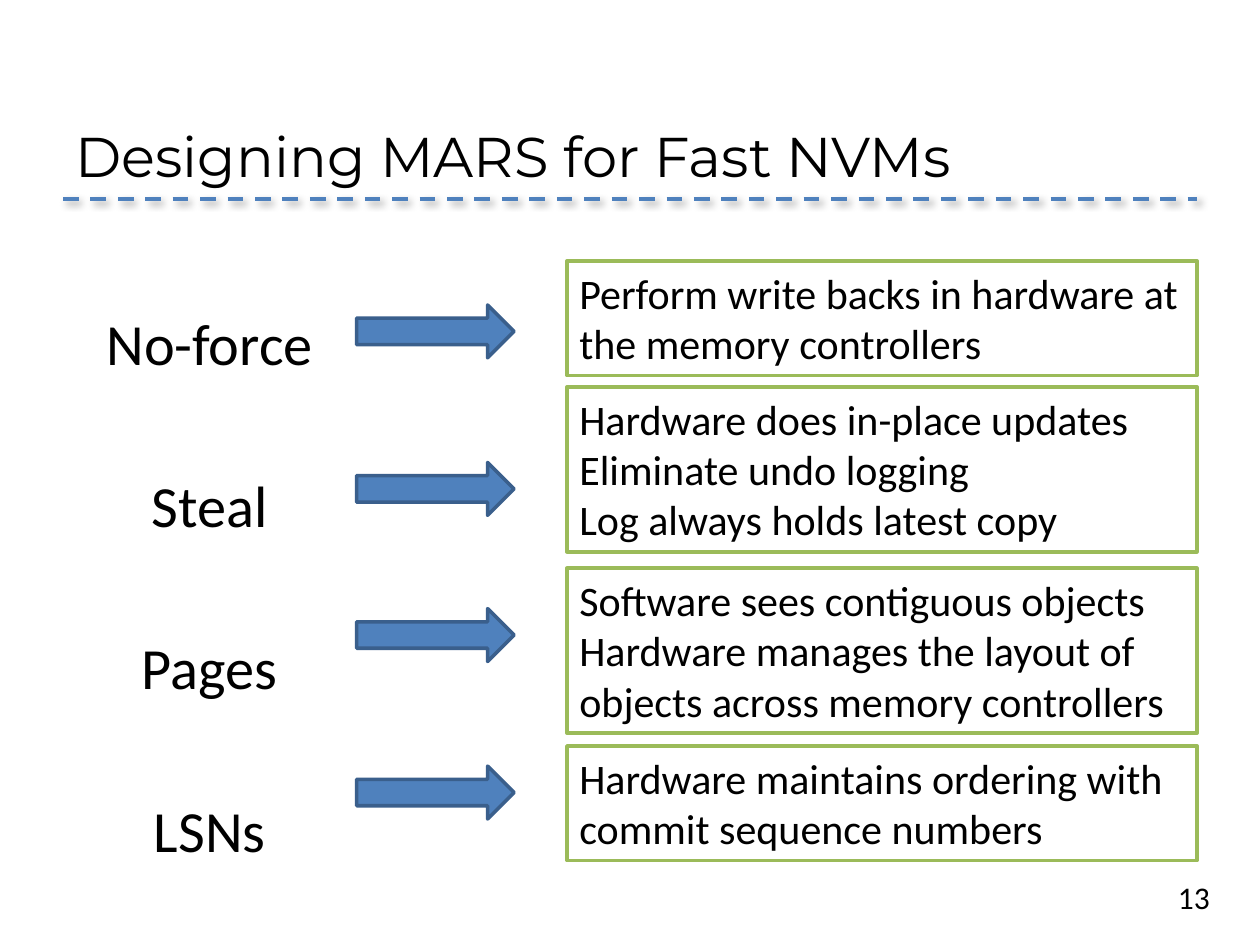
from lxml import etree
from pptx import Presentation
from pptx.dml.color import RGBColor
from pptx.enum import dml, shapes, text
from pptx.oxml import ns
from pptx.util import Inches, Pt

TITLE = "Designing MARS for Fast NVMs"
NUMBER = "13"
TOPICS = [
    ("No-force", 2.42, 2.07, 0.91,
     ["Perform write backs in hardware at the memory controllers"]),
    ("Steal", 3.67, 3.07, 1.31,
     ["Hardware does in-place updates", "Eliminate undo logging",
      "Log always holds latest copy"]),
    ("Pages", 4.83, 4.51, 1.31,
     ["Software sees contiguous objects",
      "Hardware manages the layout of objects across memory controllers"]),
    ("LSNs", 6.08, 5.92, 0.91,
     ["Hardware maintains ordering with commit sequence numbers"]),
]
BLACK, WHITE, BLUE, NAVY, GREEN = "000000", "FFFFFF", "4F81BD", "3A5F8C", "9BBB59"


def color(value):
    return RGBColor.from_string(value)


def write(box, lines, size, font="Calibri", align=text.PP_ALIGN.LEFT, gap=0):
    frame = box.text_frame
    for index, line in enumerate(lines):
        para = frame.paragraphs[0] if index == 0 else frame.add_paragraph()
        para.text = line
        para.alignment = align
        if index and gap:
            para.space_before = Pt(gap)
        para.font.size = Pt(size)
        para.font.name = font
        para.font.color.rgb = color(BLACK)


def add_text(page, place, lines, size, wrap=True, **style):
    box = page.shapes.add_textbox(*map(Inches, place))
    box.text_frame.word_wrap = wrap
    write(box, lines, size, **style)
    return box


def add_block(page, kind, place, fill, line):
    block = page.shapes.add_shape(kind, *map(Inches, place))
    block.shadow.inherit = False
    block.fill.solid()
    block.fill.fore_color.rgb = color(fill)
    block.line.color.rgb = color(line)
    block.line.width = Pt(2)
    return block


def add_rule(page):
    rule = page.shapes.add_connector(
        shapes.MSO_CONNECTOR.STRAIGHT, *map(Inches, (0.5, 1.58, 9.5, 1.58)))
    rule.line.color.rgb = color(BLUE)
    rule.line.width = Pt(2.25)
    rule.line.dash_style = dml.MSO_LINE.DASH
    effects = etree.SubElement(rule._element.spPr, ns.qn("a:effectLst"))
    shadow = etree.SubElement(
        effects, ns.qn("a:outerShdw"), blurRad=str(Pt(4)), dist=str(Pt(3)),
        dir=str(45 * 60000), rotWithShape="0")
    tint = etree.SubElement(shadow, ns.qn("a:srgbClr"), val=BLACK)
    etree.SubElement(tint, ns.qn("a:alpha"), val="40000")


def main():
    deck = Presentation()
    deck.slide_width, deck.slide_height = Inches(10), Inches(7.5)
    page = deck.slides.add_slide(deck.slide_layouts[6])

    add_text(page, (9.25, 6.92, 0.5, 0.4), [NUMBER], 18, wrap=False)
    add_rule(page)
    title = add_text(page, (0.5, 0.3, 9, 1.25), [TITLE], 32, font="Montserrat")
    title.text_frame.vertical_anchor = text.MSO_ANCHOR.BOTTOM
    add_text(page, (0, 2.39, 3.33, 4.31), [topic[0] for topic in TOPICS], 33.3,
             align=text.PP_ALIGN.CENTER, gap=52.7)

    for _, arrow_top, box_top, box_height, lines in TOPICS:
        add_block(page, shapes.MSO_SHAPE.RIGHT_ARROW,
                  (2.83, arrow_top, 1.25, 0.42), BLUE, NAVY)
        box = add_block(page, shapes.MSO_SHAPE.RECTANGLE,
                        (4.5, box_top, 5, box_height), WHITE, GREEN)
        box.text_frame.word_wrap = True
        box.text_frame.vertical_anchor = text.MSO_ANCHOR.TOP
        write(box, lines, 24)

    deck.save("out.pptx")


if __name__ == "__main__":
    main()
